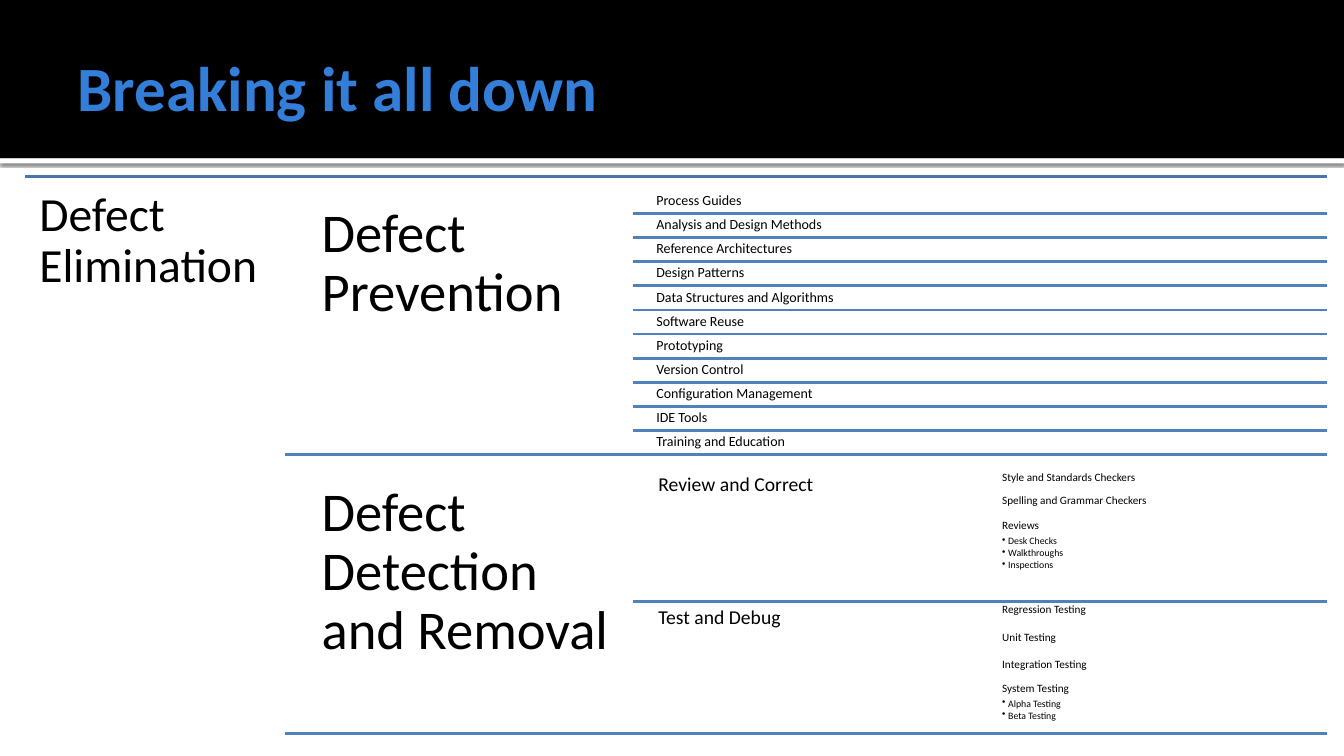
from lxml import etree
from pptx import Presentation
from pptx.dml.color import RGBColor
from pptx.enum.shapes import MSO_CONNECTOR, MSO_SHAPE
from pptx.enum.text import MSO_ANCHOR, PP_ALIGN
from pptx.oxml import parse_xml
from pptx.oxml.ns import nsdecls, qn
from pptx.util import Inches, Pt

STRAIGHT, RECT = MSO_CONNECTOR.STRAIGHT, MSO_SHAPE.RECTANGLE
MIDDLE, TOP, LEFT = MSO_ANCHOR.MIDDLE, MSO_ANCHOR.TOP, PP_ALIGN.LEFT

FONT = "Calibri"
WIDTH, HEIGHT = 13.33, 7.5
RIGHT = 13.16
COLUMNS = [0.25, 3.03, 6.47, 9.91]
RULES = [0.25, 2.83, 6.28]
ROOT_WIDTH, COLUMN_WIDTH = 2.58, 3.25
TREE_TOP, BRANCH_TOPS, BRANCH_HEIGHT = 1.75, [1.88, 4.65], 2.63

PREVENTION = [
    "Process Guides", "Analysis and Design Methods", "Reference Architectures",
    "Design Patterns", "Data Structures and Algorithms", "Software Reuse",
    "Prototyping", "Version Control", "Configuration Management", "IDE Tools",
    "Training and Education",
]
REMOVAL = [
    ("Review and Correct", [
        (0.23, ["Style and Standards Checkers"]),
        (0.25, ["Spelling and Grammar Checkers"]),
        (0.83, ["Reviews", "Desk Checks", "Walkthroughs", "Inspections"]),
    ]),
    ("Test and Debug", [
        (0.27, ["Regression Testing"]),
        (0.27, ["Unit Testing"]),
        (0.24, ["Integration Testing"]),
        (0.54, ["System Testing", "Alpha Testing", "Beta Testing"]),
    ]),
]


def color(value):
    """Return the colour for a hex string."""
    return RGBColor.from_string(value)


def set_font(p, size, value, bold=False):
    """Format the whole paragraph."""
    p.font.name, p.font.size, p.font.bold = FONT, Pt(size), bold
    p.font.color.rgb = color(value)
    p.alignment = LEFT


def add_bullet(p, indent):
    """Give the paragraph a hanging bullet."""
    pPr = p.font._element.getparent()
    pPr.set("marL", str(Inches(indent)))
    pPr.set("indent", str(-Inches(indent)))
    bullet = parse_xml(f'<a:buChar {nsdecls("a")} char="•"/>')
    pPr.find(qn("a:defRPr")).addprevious(bullet)


def add_text(s, box, lines, size, inset):
    """Place a heading and its bulleted lines in a box."""
    tf = s.shapes.add_textbox(*map(Inches, box)).text_frame
    tf.word_wrap, tf.vertical_anchor = True, TOP
    tf.margin_left = tf.margin_right = Inches(inset)
    tf.margin_top = tf.margin_bottom = Inches(inset)
    tf.text = "\n".join(lines)
    for i, p in enumerate(tf.paragraphs):
        points = size - 1 if i else size
        set_font(p, points, "000000")
        p.line_spacing = 0.9
        p.space_after = Pt(points * (0.15 if i else 0.35))
        if i:
            add_bullet(p, 0.06)


def add_rule(s, left, y, value="4F81BD"):
    """Draw a rule from a column to the right edge of the tree."""
    line = s.shapes.add_connector(STRAIGHT, *map(Inches, (left, y, RIGHT, y)))
    line.line.color.rgb, line.line.width = color(value), Pt(2)
    etree.SubElement(line.element.spPr, qn("a:effectLst"))


def add_band(s, box, fill):
    """Place a plain band behind the title."""
    sp = s.shapes.add_shape(RECT, *map(Inches, box))
    sp.fill.solid()
    sp.fill.fore_color.rgb = color(fill)
    sp.line.fill.background()
    sp.shadow.inherit = False
    s.shapes.title.element.addprevious(sp.element)
    return sp


def add_header(s, height, text):
    """Build the black header, its shadowed edge and the title."""
    edge = add_band(s, (0, height, WIDTH, 0.05), "FFFFFF")
    edge.element.spPr.find(qn("a:effectLst")).append(parse_xml(
        f'<a:outerShdw {nsdecls("a")} blurRad="{Pt(2.5)}" dist="{Pt(0.8)}" '
        'dir="5400000" algn="tl" rotWithShape="0"><a:srgbClr val="000000">'
        '<a:alpha val="60000"/></a:srgbClr></a:outerShdw>'))
    add_band(s, (0, 0, WIDTH, height), "000000")
    title = s.shapes.title
    title.left, title.top = Inches(0.67), Inches(0.17)
    title.width, title.height = Inches(12), Inches(1.37)
    tf = title.text_frame
    tf.text, tf.vertical_anchor = text, MIDDLE
    tf.margin_left = Inches(0.1)
    tf.margin_top = tf.margin_right = tf.margin_bottom = Inches(0.05)
    set_font(tf.paragraphs[0], 45, "337ED9", True)


def add_branch(s, top, text):
    """Place a main branch and its closing rule."""
    add_text(s, (COLUMNS[1], top, COLUMN_WIDTH, BRANCH_HEIGHT), [text], 39, 0.16)
    add_rule(s, RULES[1], top + BRANCH_HEIGHT)


def add_prevention(s, top):
    """Place the evenly spaced prevention practices."""
    add_branch(s, top, "Defect Prevention")
    step = BRANCH_HEIGHT / len(PREVENTION)
    for i, text in enumerate(PREVENTION):
        y = top + i * step
        add_text(s, (COLUMNS[2], y, COLUMN_WIDTH, step), [text], 10, 0.04)
        if i:
            add_rule(s, RULES[2], y)


def add_removal(s, top):
    """Place the removal activities with their details."""
    add_branch(s, top, "Defect Detection and Removal")
    step = BRANCH_HEIGHT / len(REMOVAL)
    for i, (text, details) in enumerate(REMOVAL):
        y = top + i * step
        add_text(s, (COLUMNS[2], y, COLUMN_WIDTH, step), [text], 14, 0.06)
        if i:
            add_rule(s, RULES[2], y)
        for height, lines in details:
            add_text(s, (COLUMNS[3], y, COLUMN_WIDTH, height), lines, 8, 0.03)
            y += height


def main():
    """Build and save the slide."""
    prs = Presentation()
    prs.slide_width, prs.slide_height = Inches(WIDTH), Inches(HEIGHT)
    s = prs.slides.add_slide(prs.slide_layouts[5])
    add_header(s, 1.57, "Breaking it all down")
    add_rule(s, RULES[0], TREE_TOP, "4875AC")
    add_text(s, (COLUMNS[0], TREE_TOP, ROOT_WIDTH, 5.67),
             ["Defect Elimination"], 34, 0.14)
    add_prevention(s, BRANCH_TOPS[0])
    add_removal(s, BRANCH_TOPS[1])
    prs.save("out.pptx")


if __name__ == "__main__":
    main()
